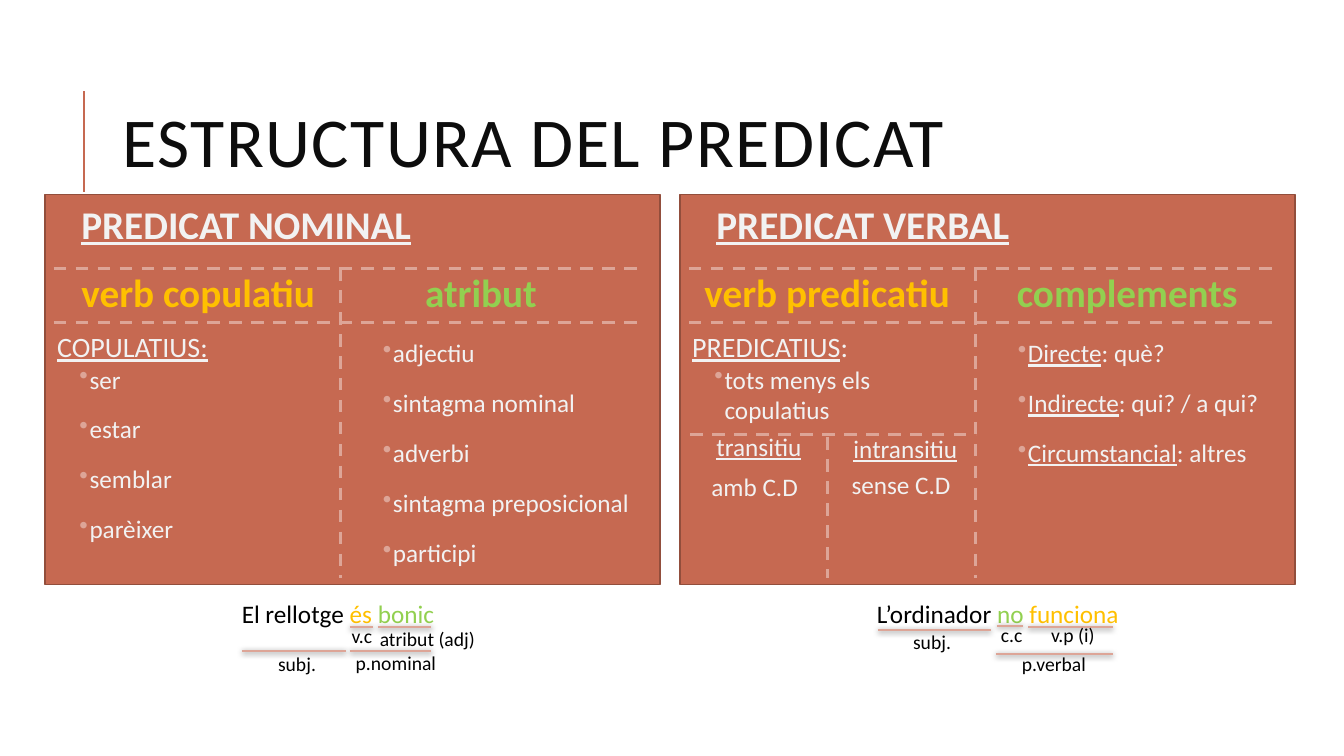
from lxml import etree
from pptx import Presentation
from pptx.dml.color import RGBColor
from pptx.enum.dml import MSO_LINE
from pptx.enum.shapes import MSO_CONNECTOR, MSO_SHAPE
from pptx.enum.text import MSO_ANCHOR
from pptx.oxml import parse_xml
from pptx.oxml.ns import nsdecls, qn
from pptx.util import Pt

RECT = MSO_SHAPE.RECTANGLE
STRAIGHT = MSO_CONNECTOR.STRAIGHT
DASH = MSO_LINE.DASH
MIDDLE = MSO_ANCHOR.MIDDLE

BRICK = RGBColor(0xC6, 0x69, 0x51)
EDGE = RGBColor(0x92, 0x4E, 0x3C)
ROSE = RGBColor(0xDD, 0xA5, 0x97)
PALE = RGBColor(0xF2, 0xF2, 0xF2)
INK = RGBColor(0x0D, 0x0D, 0x0D)
BLACK = RGBColor(0, 0, 0)
GOLD = RGBColor(0xFF, 0xC0, 0x00)
GREEN = RGBColor(0x92, 0xD0, 0x50)

FONT = "Calibri"
SHADE = (
    f'<a:outerShdw {nsdecls("a")} blurRad="50800" dist="12700" dir="5400000" rotWithShape="0">'
    '<a:srgbClr val="000000"><a:alpha val="50000"/></a:srgbClr></a:outerShdw>'
)


def rule(slide, x1, y1, x2, y2, color=ROSE, width=1.5, dash=None, shade=False):
    line = slide.shapes.add_connector(STRAIGHT, Pt(x1), Pt(y1), Pt(x2), Pt(y2))
    line.line.color.rgb = color
    line.line.width = Pt(width)
    if dash:
        line.line.dash_style = dash
    glow = etree.SubElement(line._element.spPr, qn("a:effectLst"))
    if shade:
        glow.append(parse_xml(SHADE))


def dashed(slide, x1, y1, x2, y2):
    rule(slide, x1, y1, x2, y2, width=2.25, dash=DASH)


def add_dot(props):
    props.set("indent", str(-Pt(7.2)))
    tint = etree.SubElement(props, qn("a:buClr"))
    etree.SubElement(tint, qn("a:srgbClr"), val=str(ROSE))
    etree.SubElement(props, qn("a:buChar"), char="•")


def write(slide, x, y, w, h, paras, size, color=PALE, bold=None, under=None,
          margin=0, dot=False, space=None):
    box = slide.shapes.add_textbox(Pt(x), Pt(y), Pt(w), Pt(h))
    frame = box.text_frame
    frame.word_wrap = True
    for i, runs in enumerate(paras):
        para = frame.paragraphs[0] if i == 0 else frame.add_paragraph()
        props = para._p.get_or_add_pPr()
        props.set("marL", str(Pt(margin)))
        if dot:
            add_dot(props)
        para.space_before, para.space_after = Pt(12), Pt(2)
        if space:
            para.line_spacing = space
        font = para.font
        font.name, font.size = FONT, Pt(size)
        font.bold, font.underline = bold, under
        font.color.rgb = color
        for words, style in runs:
            run = para.add_run()
            run.text = words
            if "color" in style:
                run.font.color.rgb = style["color"]
            if "under" in style:
                run.font.underline = style["under"]
    return box


def label(slide, x, y, w, words, size, **style):
    write(slide, x, y, w, 27.4, [[(words, {})]], size, margin=7.2, space=0.9, **style)


def items(slide, x, y, w, h, paras):
    write(slide, x, y, w, h, paras, 18, margin=7.2, dot=True)


def plain(*words):
    return [[(word, {})] for word in words]


def pair(term, rest):
    return [(term, {"under": True}), (rest, {})]


def title(slide, x, y, w, h):
    rule(slide, 59.8, 136.8, 59.8, 64.8, color=BRICK)
    box = write(slide, x, y, w, h, plain("ESTRUCTURA DEL PREDICAT"), 50, INK, space=0.8)
    box.text_frame.vertical_anchor = MIDDLE
    run = box.text_frame.paragraphs[0].runs[0]
    run._r.get_or_add_rPr().set("spc", "100")


def panel(slide, x, y, w, h, head, verb, other, kind, left, right):
    card = slide.shapes.add_shape(RECT, Pt(x), Pt(y), Pt(w), Pt(h))
    card.shadow.inherit = False
    card.fill.solid()
    card.fill.fore_color.rgb = BRICK
    card.line.color.rgb = EDGE
    card.line.width = Pt(1.25)
    label(slide, x + 11.5, y + 4.3, 280, head, 28, bold=True, under=True)
    for top in (52.6, 91.4):
        dashed(slide, x + 6, y + top, x + w - 13, y + top)
    dashed(slide, x + 211, y + 52.6, x + 211, y + h - 5)
    for (words, dx, wide), color in ((verb, GOLD), (other, GREEN)):
        label(slide, x + dx, y + 52.6, wide, words, 28, color=color, bold=True)
    write(slide, x - 5.8, y + 95.8, 139, 27.4, [kind], 20, margin=7.2, space=0.9)
    items(slide, x + 17.3, y + 117.4, 139, 144, left)
    items(slide, x + 234, y + 98.6, 222.5, 180, right)


def split(slide, x, y, w, h):
    dashed(slide, x + 7.2, y + 171.4, x + 211, y + 171.4)
    dashed(slide, x + 105.1, y + 173.5, x + 105.1, y + h - 5)
    for dx, dy, words, under in (
        (11.5, 167.8, "transitiu", True),
        (109.4, 169.2, "intransitiu", True),
        (7.9, 196.6, "amb C.D", None),
        (108, 195.1, "sense C.D", None),
    ):
        label(slide, x + dx, y + dy, 139, words, 18, under=under)


def sample(slide, x, y, w, h, runs, bars, tags):
    write(slide, x, y, w, h, [runs], 18, BLACK)
    for start, end, dy in bars:
        rule(slide, x + start, y + dy, x + end, y + dy, shade=True)
    for words, dx, dy, wide in tags:
        write(slide, x + dx, y + dy, wide, h, plain(words), 14, BLACK)


def main():
    deck = Presentation()
    deck.slide_width, deck.slide_height = Pt(960), Pt(540)
    slide = deck.slides.add_slide(deck.slide_layouts[6])
    title(slide, 80.6, 46.1, 765.4, 118.1)
    size = (439.2, 278.6)
    panel(
        slide, 32.4, 139, *size, "PREDICAT NOMINAL",
        ("verb copulatiu", 11.5, 192.2), ("atribut", 257, 103.7),
        [("COPULATIUS:", {"under": True})],
        plain("ser", "estar", "semblar", "parèixer"),
        plain("adjectiu", "sintagma nominal", "adverbi", "sintagma preposicional", "participi"),
    )
    sample(
        slide, 165.6, 424.1, 222.5, 29.5,
        [("El rellotge ", {}), ("és ", {"color": GOLD}), ("bonic", {"color": GREEN})],
        [(84.2, 100.8, 23.8), (104.4, 142.6, 23.8), (84.2, 142.6, 41), (7.2, 81.4, 41)],
        [("v.c", 78.5, 18, 41), ("atribut (adj)", 98.6, 20.2, 87.8),
         ("p.nominal", 81.4, 37.4, 72), ("subj.", 25.9, 38.2, 44.6)],
    )
    panel(
        slide, 486, 139, *size, "PREDICAT VERBAL",
        ("verb predicatiu", 2.9, 211), ("complements", 226, 185.8),
        pair("PREDICATIUS", ":"),
        plain("tots menys els copulatius"),
        [pair("Directe", ": què?"), pair("Indirecte", ": qui? / a qui?"),
         pair("Circumstancial", ": altres")],
    )
    split(slide, 486, 139, *size)
    sample(
        slide, 619.2, 424.1, 222.5, 29.5,
        [("L’ordinador ", {}), ("no ", {"color": GREEN}), ("funciona", {"color": GOLD})],
        [(115.2, 175.7, 23.8), (92.9, 111.6, 23), (92.2, 175.7, 43.2), (7.9, 88.6, 25.9)],
        [("v.p (i)", 124.6, 17.3, 48.2), ("c.c", 88.6, 17.3, 33.1),
         ("p.verbal", 103.7, 38.2, 72), ("subj.", 25.9, 22.3, 44.6)],
    )
    deck.save("out.pptx")


if __name__ == "__main__":
    main()
